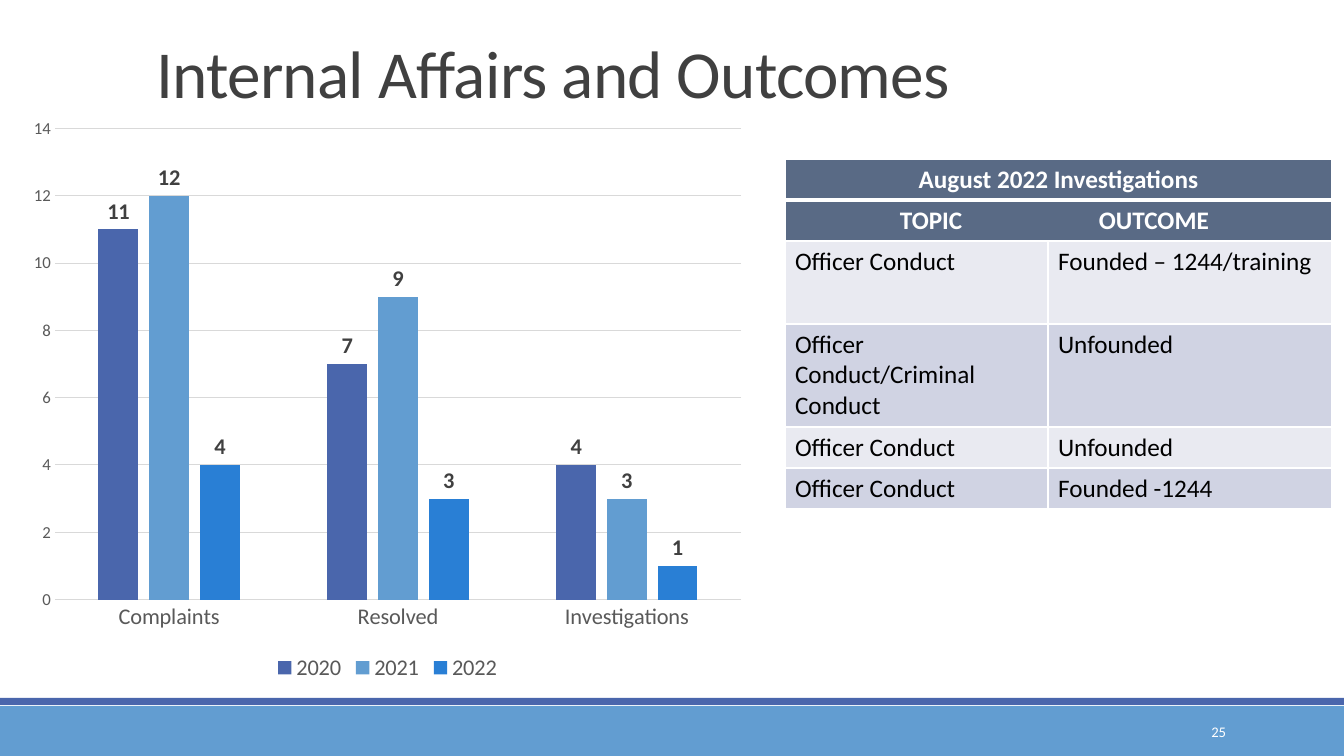
from lxml.etree import SubElement
from pptx import Presentation
from pptx.chart.data import CategoryChartData
from pptx.dml.color import RGBColor
from pptx.enum.chart import XL_CHART_TYPE, XL_LABEL_POSITION, XL_LEGEND_POSITION, XL_TICK_MARK
from pptx.enum.shapes import MSO_SHAPE
from pptx.enum.text import MSO_ANCHOR, MSO_AUTO_SIZE, PP_ALIGN
from pptx.oxml.ns import qn
from pptx.util import Emu, Pt

WHITE = RGBColor(0xFF, 0xFF, 0xFF)
BLACK = RGBColor(0x00, 0x00, 0x00)
INK = RGBColor(0x40, 0x40, 0x40)
AXIS_GREY = RGBColor(0x59, 0x59, 0x59)
GRID_GREY = RGBColor(0xD9, 0xD9, 0xD9)
INDIGO = RGBColor(0x4A, 0x66, 0xAC)
SKY = RGBColor(0x62, 0x9D, 0xD1)
AZURE = RGBColor(0x29, 0x7F, 0xD5)
SLATE = RGBColor(0x59, 0x6A, 0x85)
PALE_BAND = RGBColor(0xE9, 0xEA, 0xF1)
DEEP_BAND = RGBColor(0xD0, 0xD3, 0xE3)

SLIDE_WIDTH, SLIDE_HEIGHT = 12192000, 6858000
SCALE = SLIDE_WIDTH / 1344


def px(length):
    return Emu(round(length * SCALE))


class SlideBuilder:
    face = "Calibri"

    def __init__(self, deck):
        self.slide = deck.slides.add_slide(deck.slide_layouts[5])
        self.shapes = self.slide.shapes

    def style(self, font, size, color, bold=False):
        font.name = self.face
        font.size = Pt(size)
        font.color.rgb = color
        font.bold = bold

    def add_words(self, paragraph, words, size, color, bold=False, align=PP_ALIGN.LEFT):
        paragraph.alignment = align
        run = paragraph.add_run()
        run.text = words
        self.style(run.font, size, color, bold)
        return run

    def band(self, left, top, width, height, color):
        bar = self.shapes.add_shape(MSO_SHAPE.RECTANGLE, *map(px, (left, top, width, height)))
        bar.fill.solid()
        bar.fill.fore_color.rgb = color
        bar.line.fill.background()
        bar.shadow.inherit = False

    def title(self, words, left, top, width, height):
        heading = self.shapes.title
        heading.left, heading.top, heading.width, heading.height = map(px, (left, top, width, height))
        frame = heading.text_frame
        frame.word_wrap = True
        frame.auto_size = MSO_AUTO_SIZE.NONE
        frame.vertical_anchor = MSO_ANCHOR.BOTTOM
        frame.paragraphs[0].line_spacing = 0.85
        run = self.add_words(frame.paragraphs[0], words, 48, INK)
        run.font._element.set("spc", "-50")

    def page_number(self, number, left, top, width, height):
        frame = self.shapes.add_textbox(*map(px, (left, top, width, height))).text_frame
        frame.word_wrap = True
        frame.vertical_anchor = MSO_ANCHOR.MIDDLE
        self.add_words(frame.paragraphs[0], number, 10.5, WHITE, align=PP_ALIGN.RIGHT)

    def column_chart(self, categories, years, left, top, width, height):
        data = CategoryChartData(number_format="General")
        data.categories = categories
        for year, counts, _ in years:
            data.add_series(year, counts)
        chart = self.shapes.add_chart(
            XL_CHART_TYPE.COLUMN_CLUSTERED, *map(px, (left, top, width, height)), data).chart
        self.style(chart.font, 10, BLACK)
        chart.has_title = False
        chart.has_legend = True
        chart.legend.position = XL_LEGEND_POSITION.BOTTOM
        chart.legend.include_in_layout = False
        self.style(chart.legend.font, 16, AXIS_GREY)

        for axis, size in ((chart.category_axis, 16), (chart.value_axis, 12)):
            axis.major_tick_mark = axis.minor_tick_mark = XL_TICK_MARK.NONE
            self.style(axis.tick_labels.font, size, AXIS_GREY)
        scale = chart.value_axis
        scale.minimum_scale, scale.maximum_scale, scale.major_unit = 0, 14, 2
        scale.format.line.fill.background()
        for line in (chart.category_axis.format.line, scale.major_gridlines.format.line):
            line.color.rgb = GRID_GREY
            line.width = Pt(0.75)

        plot = chart.plots[0]
        plot.gap_width, plot.overlap = 219, -27
        plot.vary_by_categories = False
        for series, (_, _, color) in zip(plot.series, years):
            series.format.fill.solid()
            series.format.fill.fore_color.rgb = color
            labels = series.data_labels
            labels.show_value = True
            labels.position = XL_LABEL_POSITION.OUTSIDE_END
            self.style(labels.font, 16, INK, True)

    def cell_look(self, cell, color, top=1, bottom=1):
        properties = cell._tc.get_or_add_tcPr()
        for side, points in (("L", 1), ("R", 1), ("T", top), ("B", bottom)):
            border = SubElement(properties, qn(f"a:ln{side}"), w=str(Pt(points)))
            paint = SubElement(border, qn("a:solidFill"))
            SubElement(paint, qn("a:srgbClr"), val=str(WHITE))
        cell.fill.solid()
        cell.fill.fore_color.rgb = color

    def outcome_table(self, heading, labels, findings, left, top, widths, heights):
        table = self.shapes.add_table(
            len(heights), len(widths), *map(px, (left, top, sum(widths), sum(heights)))).table
        for column, width in zip(table.columns, widths):
            column.width = px(width)
        for row, height in zip(table.rows, heights):
            row.height = px(height)

        for index in range(2):
            for cell in table.rows[index].cells:
                self.cell_look(cell, SLATE, top=(1, 3)[index], bottom=(3, 1)[index])
            table.cell(index, 0).merge(table.cell(index, 1))
        self.add_words(table.cell(0, 0).text_frame.paragraphs[0], heading, 18, WHITE, True, PP_ALIGN.CENTER)

        label_cell = table.cell(1, 0)
        label_cell.margin_left = px(115)
        label_line = label_cell.text_frame.paragraphs[0]
        self.add_words(label_line, "\t".join(labels), 18, WHITE, True)
        stops = SubElement(label_line._p.get_or_add_pPr(), qn("a:tabLst"))
        SubElement(stops, qn("a:tab"), pos=str(px(199)), algn="l")

        for index, finding in enumerate(findings):
            for column, words in enumerate(finding):
                cell = table.cell(index + 2, column)
                self.cell_look(cell, (PALE_BAND, DEEP_BAND)[index % 2])
                self.add_words(cell.text_frame.paragraphs[0], words, 18, BLACK)


def main():
    deck = Presentation()
    deck.slide_width, deck.slide_height = SLIDE_WIDTH, SLIDE_HEIGHT
    page = SlideBuilder(deck)
    page.band(0, 706, 1344, 50, SKY)
    page.band(0, 698, 1344, 7, INDIGO)
    page.title("Internal Affairs and Outcomes", 146, 19, 926, 98)
    page.column_chart(
        ("Complaints", "Resolved", "Investigations"),
        (("2020", (11, 7, 4), INDIGO), ("2021", (12, 9, 3), SKY), ("2022", (4, 3, 1), AZURE)),
        19, 107, 737, 579)
    page.outcome_table(
        "August 2022 Investigations",
        ("TOPIC", "OUTCOME"),
        (("Officer Conduct", "Founded – 1244/training"),
         ("Officer Conduct/Criminal Conduct", "Unfounded"),
         ("Officer Conduct", "Unfounded"),
         ("Officer Conduct", "Founded -1244")),
        785, 159, (263, 284), (41, 41, 83, 103, 41, 41))
    page.page_number("25", 1092, 712, 144, 40)
    deck.save("out.pptx")


if __name__ == "__main__":
    main()
